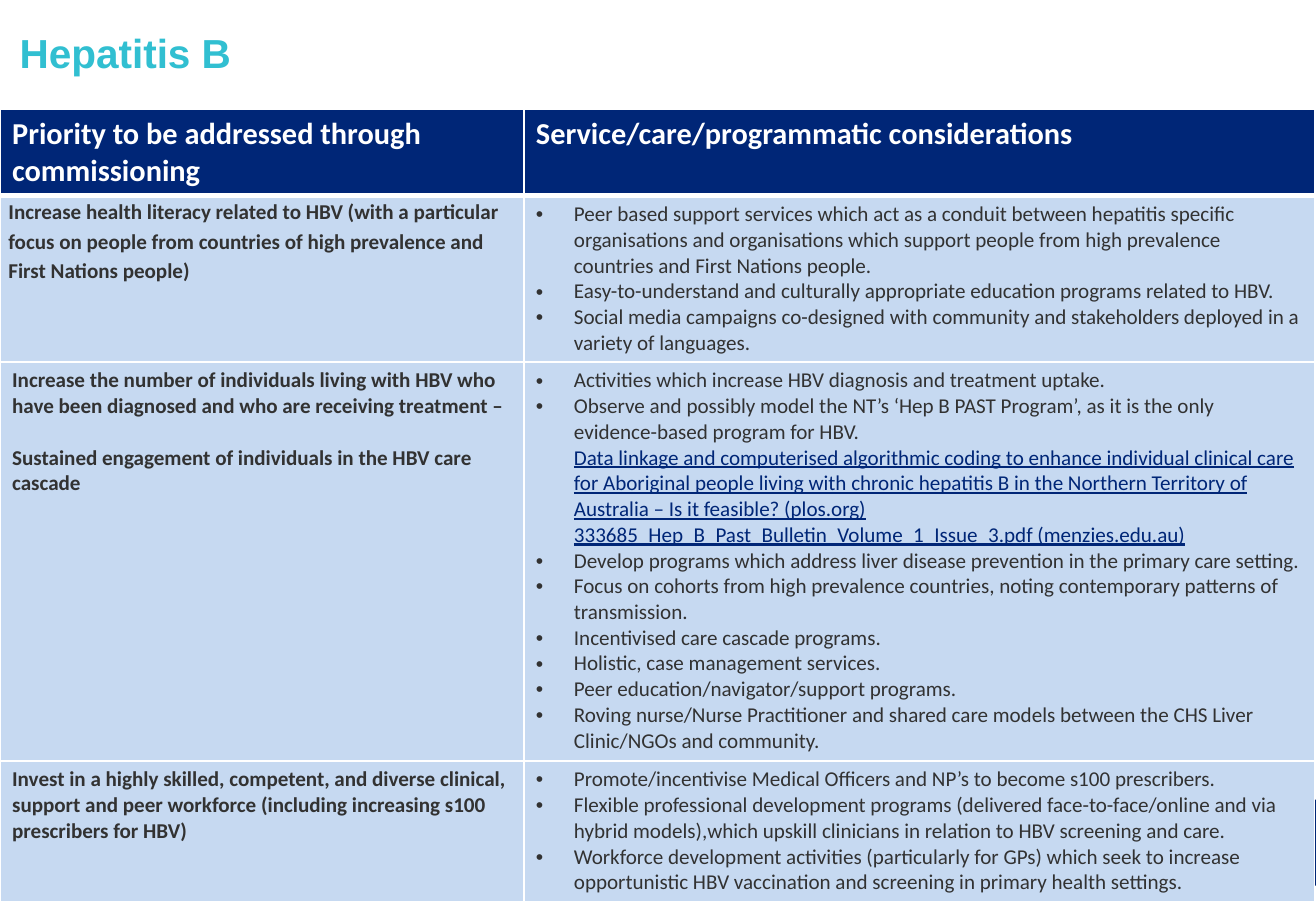
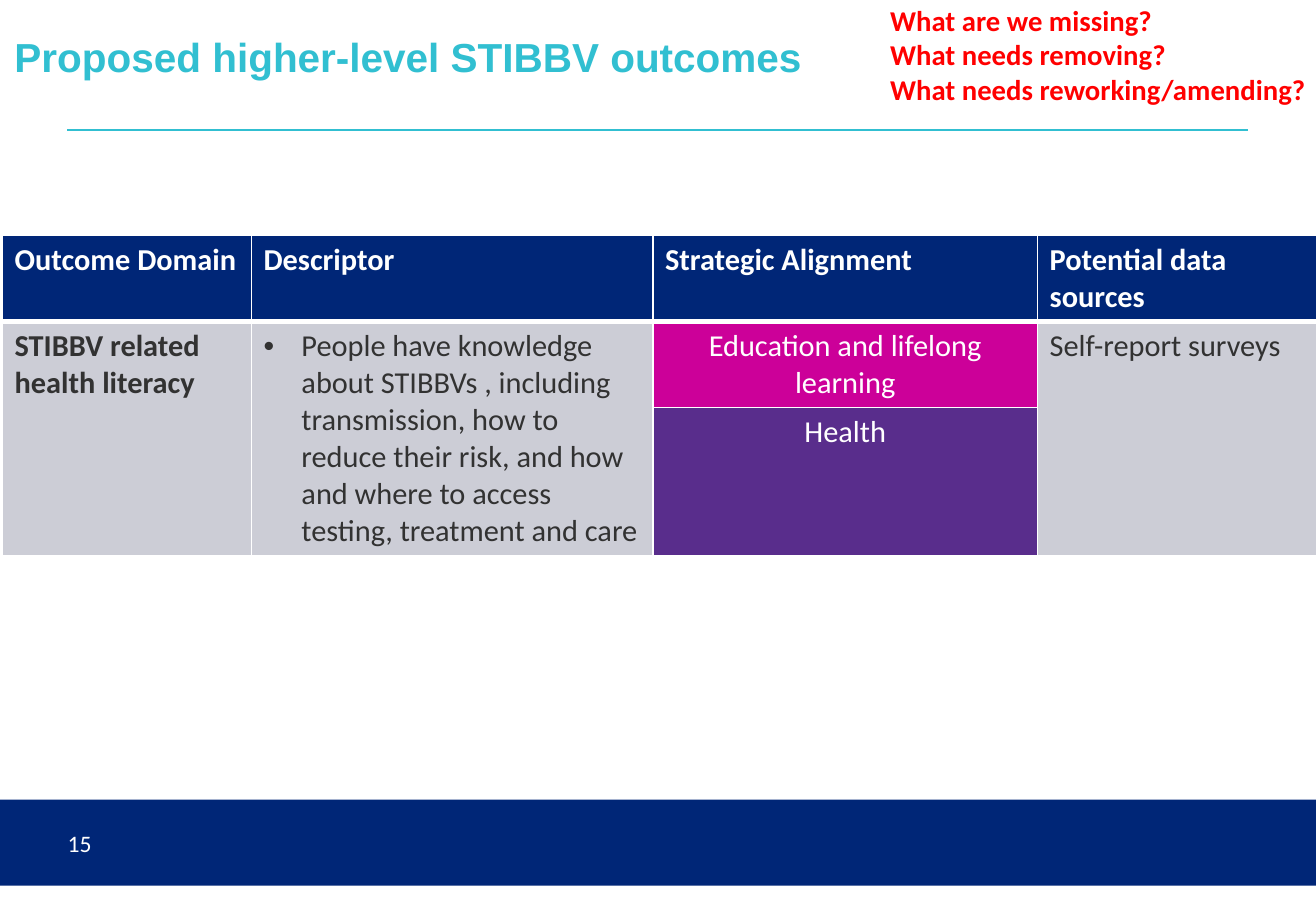
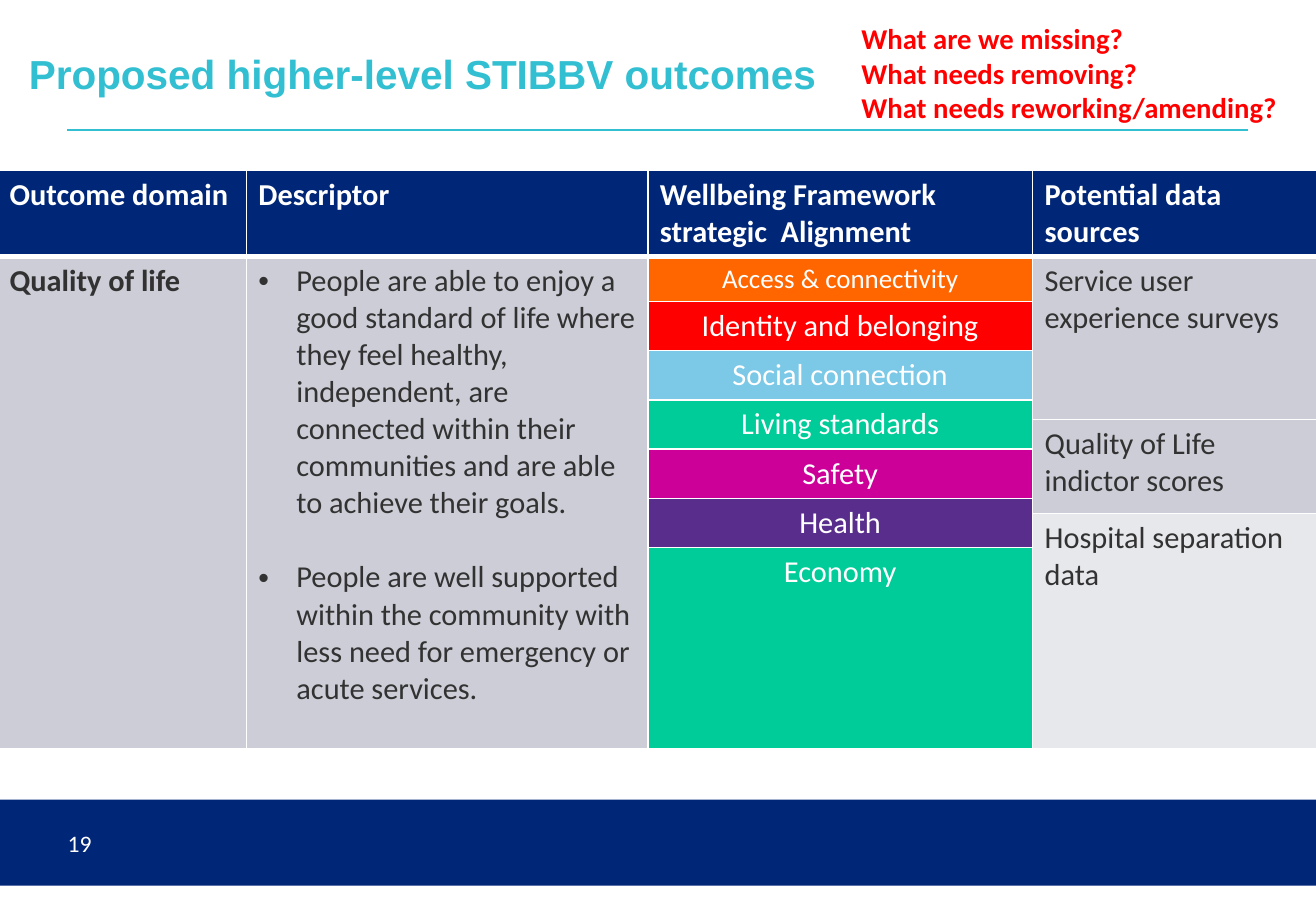
from dataclasses import dataclass
from typing import Any

from lxml import etree
from pptx import Presentation
from pptx import util as u
from pptx.dml import color as col
from pptx.enum import shapes, text
from pptx.oxml import ns

HUES = {
    "navy": "002677", "teal": "31BFD1", "white": "FFFFFF", "ink": "323232",
    "red": "FF0000", "pale": "C6D9F1", "grey": "CCCDD6", "light": "E7E8EC",
    "pink": "CC0099", "plum": "592D8C", "orange": "FF6600", "sky": "7BC8E7",
    "green": "00CC99",
}
WIDE, HIGH = 780, 540
HANG = 22.5
BODY = {"name": "Calibri", "size": 18, "bold": False, "color": "ink"}
BOLD = BODY | {"bold": True}
HEAD = BOLD | {"color": "white"}
TAG = BODY | {"color": "white"}
SMALL = BODY | {"size": 12.5}
STRONG = SMALL | {"bold": True}
LINK = SMALL | {"color": "navy", "underline": True}
TITLE = {"name": "Arial", "size": 24, "bold": True, "color": "teal"}
ASK = BOLD | {"size": 17, "color": "red"}
PAGE = TAG | {"size": 14}
ASKS = ("What are we missing?", "What needs removing?", "What needs reworking/amending?")


@dataclass(frozen=True)
class Para:
    words: str
    look: dict[str, Any]
    bullet: bool = False
    links: tuple[str, ...] = ()
    gap: float = 0
    lead: float = 1
    mid: bool = False


@dataclass(frozen=True)
class Cell:
    row: int
    col: int
    fill: str
    paras: tuple[Para, ...]
    span: int = 1
    tight: bool = False


@dataclass(frozen=True)
class Grid:
    left: float
    top: float
    cols: tuple[float, ...]
    rows: tuple[float, ...]
    heads: tuple[str, ...]
    cells: tuple[Cell, ...]


@dataclass(frozen=True)
class Sheet:
    title: str
    left: float
    top: float
    grid: Grid
    page: str = ""
    ask: tuple[float, float] | None = None


def rgb(name: str) -> col.RGBColor:
    return col.RGBColor.from_string(HUES[name])


def style(font: Any, look: dict[str, Any]) -> None:
    for key, val in look.items():
        if key == "color":
            font.color.rgb = rgb(val)
        else:
            setattr(font, key, u.Pt(val) if key == "size" else val)


def node(root: Any, tag: str, **attrs: str) -> Any:
    kid = etree.SubElement(root, ns.qn(tag))
    for key, val in attrs.items():
        kid.set(key, val)
    return kid


def write(frame: Any, paras: tuple[Para, ...]) -> None:
    frame.word_wrap = True
    for num, para in enumerate(paras):
        line = frame.paragraphs[0] if num == 0 else frame.add_paragraph()
        if para.bullet:
            props = line._p.get_or_add_pPr()
            props.set("marL", str(u.Pt(HANG)))
            props.set("indent", str(-u.Pt(HANG)))
            node(props, "a:buFont", typeface="Arial")
            node(props, "a:buChar", char="•")
        if para.gap:
            line.space_before = u.Pt(para.gap)
        if para.lead != 1:
            line.line_spacing = para.lead
        if para.mid:
            line.alignment = text.PP_ALIGN.CENTER
        run = line.add_run()
        run.text = para.words
        style(run.font, para.look)
        for link in para.links:
            line.add_line_break()
            run = line.add_run()
            run.text = link
            style(run.font, LINK)


def box(slide: Any, at: tuple[float, ...], anchor: Any, paras: tuple[Para, ...]) -> None:
    frame = slide.shapes.add_textbox(*map(u.Pt, at)).text_frame
    frame.vertical_anchor = anchor
    write(frame, paras)


def edge(cell: Any, row: int) -> None:
    props = cell._tc.get_or_add_tcPr()
    thick = {"a:lnT": 3 if row == 1 else 1, "a:lnB": 3 if row == 0 else 1}
    for num, tag in enumerate(("a:lnL", "a:lnR", "a:lnT", "a:lnB")):
        line = node(props, tag, w=str(u.Pt(thick.get(tag, 1))))
        node(node(line, "a:solidFill"), "a:srgbClr", val=HUES["white"])
        props.insert(num, line)


def table(slide: Any, grid: Grid) -> None:
    at = (grid.left, grid.top, sum(grid.cols), sum(grid.rows))
    made = slide.shapes.add_table(len(grid.rows), len(grid.cols), *map(u.Pt, at)).table
    made.horz_banding = False
    for part, size in zip(made.columns, grid.cols):
        part.width = u.Pt(size)
    for part, size in zip(made.rows, grid.rows):
        part.height = u.Pt(size)
    heads = tuple(Cell(0, num, "navy", (Para(word, HEAD),)) for num, word in enumerate(grid.heads))
    for item in heads + grid.cells:
        cell = made.cell(item.row, item.col)
        if item.span > 1:
            cell.merge(made.cell(item.row + item.span - 1, item.col))
        cell.fill.solid()
        cell.fill.fore_color.rgb = rgb(item.fill)
        if item.tight:
            for side, size in {"left": 5, "right": 5, "top": 0, "bottom": 0}.items():
                setattr(cell, f"margin_{side}", u.Pt(size))
        write(cell.text_frame, item.paras)
    for row in range(len(grid.rows)):
        for num in range(len(grid.cols)):
            edge(made.cell(row, num), row)


def frame(slide: Any, sheet: Sheet) -> None:
    band = slide.shapes.add_shape(
        shapes.MSO_SHAPE.RECTANGLE, *map(u.Pt, (0, 474, WIDE, 51)))
    band.shadow.inherit = False
    band.fill.solid()
    band.fill.fore_color.rgb = rgb("navy")
    band.line.fill.background()
    if sheet.page:
        rule = slide.shapes.add_connector(
            shapes.MSO_CONNECTOR.STRAIGHT, *map(u.Pt, (40, 77, 740, 77)))
        rule.line.color.rgb = rgb("teal")
        rule.line.width = u.Pt(1)
        node(rule._element.spPr, "a:effectLst")
        box(slide, (33, 485.5, 216, 29), text.MSO_ANCHOR.MIDDLE, (Para(sheet.page, PAGE),))
    box(slide, (sheet.left, sheet.top, 702, 39), text.MSO_ANCHOR.BOTTOM,
        (Para(sheet.title, TITLE),))


def draw(deck: Any, sheet: Sheet) -> None:
    slide = deck.slides.add_slide(deck.slide_layouts[6])
    frame(slide, sheet)
    table(slide, sheet.grid)
    if sheet.ask:
        box(slide, (*sheet.ask, 345.5, 69), text.MSO_ANCHOR.TOP,
            tuple(Para(word, ASK) for word in ASKS))


def points(*words: str) -> tuple[Para, ...]:
    return tuple(Para(word, SMALL, True) for word in words)


def tag(row: int, fill: str, word: str, span: int = 1, size: float = 18) -> Cell:
    return Cell(row, 2, fill, (Para(word, TAG | {"size": size}, mid=True),), span)


def plain(row: int, num: int, word: str, span: int, fill: str = "grey") -> Cell:
    return Cell(row, num, fill, (Para(word, BODY if num else BOLD),), span)


HEP = Grid(
    0, 65, (310.5, 468.5), (51, 98.5, 236.5, 83.5),
    ("Priority to be addressed through commissioning",
     "Service/care/programmatic considerations"),
    (
        Cell(1, 0, "pale", (Para(
            "Increase health literacy related to HBV (with a particular focus on people from "
            "countries of high prevalence and First Nations people)", STRONG, lead=1.15),),
            tight=True),
        Cell(1, 1, "pale", points(
            "Peer based support services which act as a conduit between hepatitis specific "
            "organisations and organisations which support people from high prevalence "
            "countries and First Nations people.",
            "Easy-to-understand and culturally appropriate education programs related to HBV.",
            "Social media campaigns co-designed with community and stakeholders deployed in a "
            "variety of languages.")),
        Cell(2, 0, "pale", (
            Para("Increase the number of individuals living with HBV who have been diagnosed "
                 "and who are receiving treatment –", STRONG),
            Para("Sustained engagement of individuals in the HBV care cascade", STRONG,
                 gap=15.25))),
        Cell(2, 1, "pale", (
            *points("Activities which increase HBV diagnosis and treatment uptake."),
            Para("Observe and possibly model the NT’s ‘Hep B PAST Program’, as it is the only "
                 "evidence-based program for HBV.", SMALL, True, (
                     "Data linkage and computerised algorithmic coding to enhance individual "
                     "clinical care for Aboriginal people living with chronic hepatitis B in "
                     "the Northern Territory of Australia – Is it feasible? (plos.org)",
                     "333685_Hep_B_Past_Bulletin_Volume_1_Issue_3.pdf (menzies.edu.au)")),
            *points(
                "Develop programs which address liver disease prevention in the primary care "
                "setting.",
                "Focus on cohorts from high prevalence countries, noting contemporary patterns "
                "of transmission.",
                "Incentivised care cascade programs.",
                "Holistic, case management services.",
                "Peer education/navigator/support programs.",
                "Roving nurse/Nurse Practitioner and shared care models between the CHS Liver "
                "Clinic/NGOs and community."))),
        Cell(3, 0, "pale", (Para(
            "Invest in a highly skilled, competent, and diverse clinical, support and peer "
            "workforce (including increasing s100 prescribers for HBV)", STRONG),)),
        Cell(3, 1, "pale", points(
            "Promote/incentivise Medical Officers and NP’s to become s100 prescribers.",
            "Flexible professional development programs (delivered face-to-face/online and via "
            "hybrid models),which upskill clinicians in relation to HBV screening and care.",
            "Workforce development activities (particularly for GPs) which seek to increase "
            "opportunistic HBV vaccination and screening in primary health settings.")),
    ))

COLS = (147.5, 238, 228, 169)
SKILL = Grid(
    1.5, 139.5, COLS, (51, 51, 88),
    ("Outcome Domain", "Descriptor", "Strategic Alignment", "Potential data sources"),
    (
        plain(1, 0, "STIBBV related health literacy", 2),
        Cell(1, 1, "grey", (Para(
            "People have knowledge about STIBBVs , including transmission, how to reduce their "
            "risk, and how and where to access testing, treatment and care", BODY, True),), 2),
        tag(1, "pink", "Education and lifelong learning"),
        tag(2, "plum", "Health"),
        plain(1, 3, "Self-report surveys", 2),
    ))

LIFE = Grid(
    -1.5, 101, COLS, (51, 26.7, 29.2, 29.2, 11.5, 17.7, 29.2, 9, 20.2, 119.5),
    ("Outcome domain", "Descriptor", "Wellbeing Framework strategic  Alignment",
     "Potential data sources"),
    (
        plain(1, 0, "Quality of life", 9),
        Cell(1, 1, "grey", (
            Para("People are able to enjoy a good standard of life where they feel healthy, "
                 "independent, are connected within their communities and are able to achieve "
                 "their goals.", BODY, True),
            Para("People are well supported within the community with less need for emergency "
                 "or acute services.", BODY, True, gap=22)), 9),
        tag(1, "orange", "Access & connectivity", size=16),
        tag(2, "red", "Identity and belonging"),
        tag(3, "sky", "Social connection"),
        tag(4, "green", "Living standards", 2),
        tag(6, "pink", "Safety"),
        tag(7, "plum", "Health", 2),
        tag(9, "green", "Economy"),
        plain(1, 3, "Service user experience surveys", 4),
        plain(5, 3, "Quality of Life indictor scores", 3),
        plain(8, 3, "Hospital separation data", 2, "light"),
    ))

GOALS = "Proposed higher-level STIBBV outcomes"
SHEETS = (
    Sheet("Hepatitis B", 4.5, 10, HEP),
    Sheet(GOALS, 1.5, 12.5, SKILL, "15", (520.5, -2)),
    Sheet(GOALS, 10, 22.5, LIFE, "19", (503.5, 9)),
)


def main() -> None:
    deck = Presentation()
    deck.slide_width, deck.slide_height = u.Pt(WIDE), u.Pt(HIGH)
    for sheet in SHEETS:
        draw(deck, sheet)
    deck.save("out.pptx")


if __name__ == "__main__":
    main()
